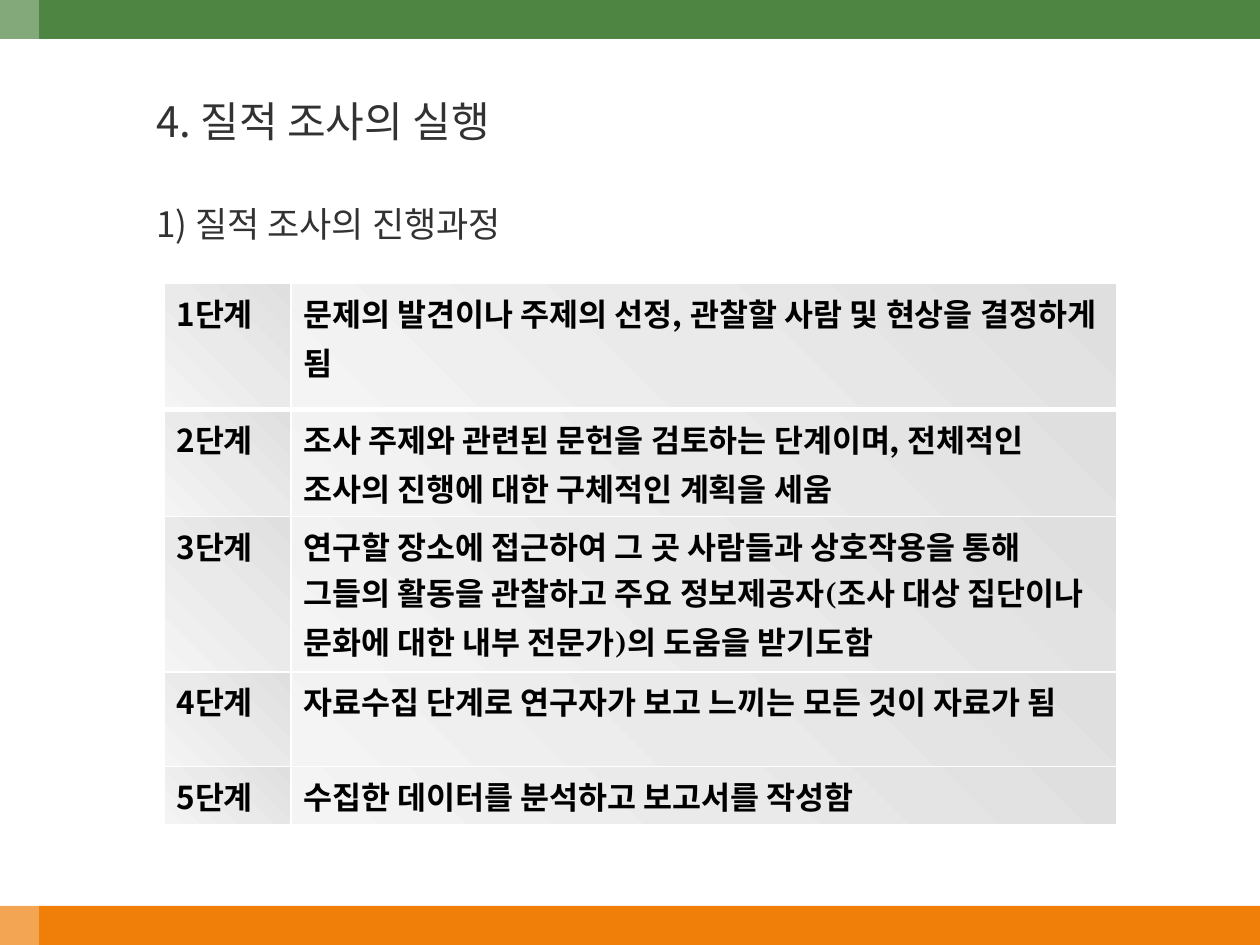
"""Build the slide on the steps of qualitative research."""
from lxml import etree
from pptx import Presentation
from pptx.dml.color import RGBColor
from pptx.enum import shapes, text
from pptx.oxml import ns
from pptx.util import Inches, Pt

SANS = "Noto Sans CJK KR"
SERIF = "TeX Gyre Schola"
WHITE = RGBColor(0xFF, 0xFF, 0xFF)
BLACK = RGBColor(0, 0, 0)
GRAY = RGBColor(0x32, 0x32, 0x32)
GREEN = RGBColor(0x4E, 0x85, 0x42)
ORANGE = RGBColor(0xF0, 0x7F, 0x09)
SHADES = [
    (0, RGBColor(0xDF, 0xDF, 0xDF)),
    (50, RGBColor(0xEA, 0xEA, 0xEA)),
    (100, RGBColor(0xF4, 0xF4, 0xF4)),
]
STEPS = [
    ("문제의 발견이나 주제의 선정, 관찰할 사람 및 현상을 결정하게 됨", 1),
    ("조사 주제와 관련된 문헌을 검토하는 단계이며, 전체적인 조사의 진행에 대한 구체적인 계획을 세움", 0.75),
    ("연구할 장소에 접근하여 그 곳 사람들과 상호작용을 통해 그들의 활동을 관찰하고 주요 정보제공자"
     "(조사 대상 집단이나 문화에 대한 내부 전문가)의 도움을 받기도함", 1.08),
    ("자료수집 단계로 연구자가 보고 느끼는 모든 것이 자료가 됨", 0.75),
    ("수집한 데이터를 분석하고 보고서를 작성함", 0.44),
]


def add(parent, tag, **attrs):
    return etree.SubElement(parent, ns.qn(tag), {k: str(v) for k, v in attrs.items()})


def write(tf, words, size=18, font=SANS, color=BLACK, bold=False):
    tf.word_wrap = True
    p = tf.paragraphs[0]
    p.alignment = text.PP_ALIGN.LEFT
    r = p.add_run()
    r.text = words
    r.font.size, r.font.name, r.font.bold = Pt(size), font, bold
    r.font.color.rgb = color
    add(r._r.get_or_add_rPr(), "a:ea", typeface=SANS)


class Deck:
    def __init__(self, width, height):
        self.prs = Presentation()
        self.prs.slide_width, self.prs.slide_height = Inches(width), Inches(height)
        self.s = self.prs.slides.add_slide(self.prs.slide_layouts[5])

    def bar(self, x, y, w, h, color, opacity=100):
        sp = self.s.shapes.add_shape(
            shapes.MSO_SHAPE.RECTANGLE, Inches(x), Inches(y), Inches(w), Inches(h))
        sp.shadow.inherit = False
        sp.fill.solid()
        sp.fill.fore_color.rgb = color
        sp.line.fill.background()
        if opacity < 100:
            add(sp._element.spPr.find(".//" + ns.qn("a:srgbClr")), "a:alpha", val=opacity * 1000)

    def heading(self, sp, words, x, y, w, h, size):
        sp.left, sp.top, sp.width, sp.height = Inches(x), Inches(y), Inches(w), Inches(h)
        tf = sp.text_frame
        tf.auto_size = text.MSO_AUTO_SIZE.NONE
        tf.vertical_anchor = text.MSO_ANCHOR.TOP
        write(tf, words, size=size, color=GRAY)

    def title(self, words, *box, size=24):
        self.heading(self.s.shapes.title, words, *box, size)

    def subtitle(self, words, *box, size=20):
        self.heading(self.s.shapes.add_textbox(0, 0, 0, 0), words, *box, size)

    def cell(self, cell, words, font, bottom):
        write(cell.text_frame, words, font=font, bold=True)
        tc = cell._tc.get_or_add_tcPr()
        for side, width in (("L", 1), ("R", 1), ("T", 1), ("B", bottom)):
            line = add(tc, f"a:ln{side}", w=Pt(width))
            add(add(line, "a:solidFill"), "a:srgbClr", val=WHITE)
        grad = add(tc, "a:gradFill", rotWithShape=1)
        stops = add(grad, "a:gsLst")
        for place, color in SHADES:
            add(add(stops, "a:gs", pos=place * 1000), "a:srgbClr", val=color)
        add(grad, "a:lin", ang=135 * 60000, scaled=0)

    def table(self, steps, x, y, widths):
        height = sum(h for _, h in steps)
        table = self.s.shapes.add_table(
            len(steps), len(widths), Inches(x), Inches(y),
            Inches(sum(widths)), Inches(height)).table
        table.horz_banding = False
        for column, width in zip(table.columns, widths):
            column.width = Inches(width)
        for i, (words, h) in enumerate(steps):
            table.rows[i].height = Inches(h)
            bottom = 3 if i == 0 else 1
            self.cell(table.cell(i, 0), f"{i + 1}단계", SANS, bottom)
            self.cell(table.cell(i, 1), words, SERIF, bottom)


def main():
    deck = Deck(10, 7.5)
    deck.bar(0, 7.19, 10, 0.31, ORANGE)
    deck.bar(0, 0, 10, 0.31, GREEN)
    deck.bar(0, 0, 0.31, 7.5, WHITE, opacity=30)
    deck.title("4. 질적 조사의 실행", 1.14, 0.71, 7.8, 0.6)
    deck.subtitle("1) 질적 조사의 진행과정", 1.14, 1.56, 7.8, 0.55)
    deck.table(STEPS, 1.3, 2.25, [1.01, 6.55])
    deck.prs.save("out.pptx")


if __name__ == "__main__":
    main()
